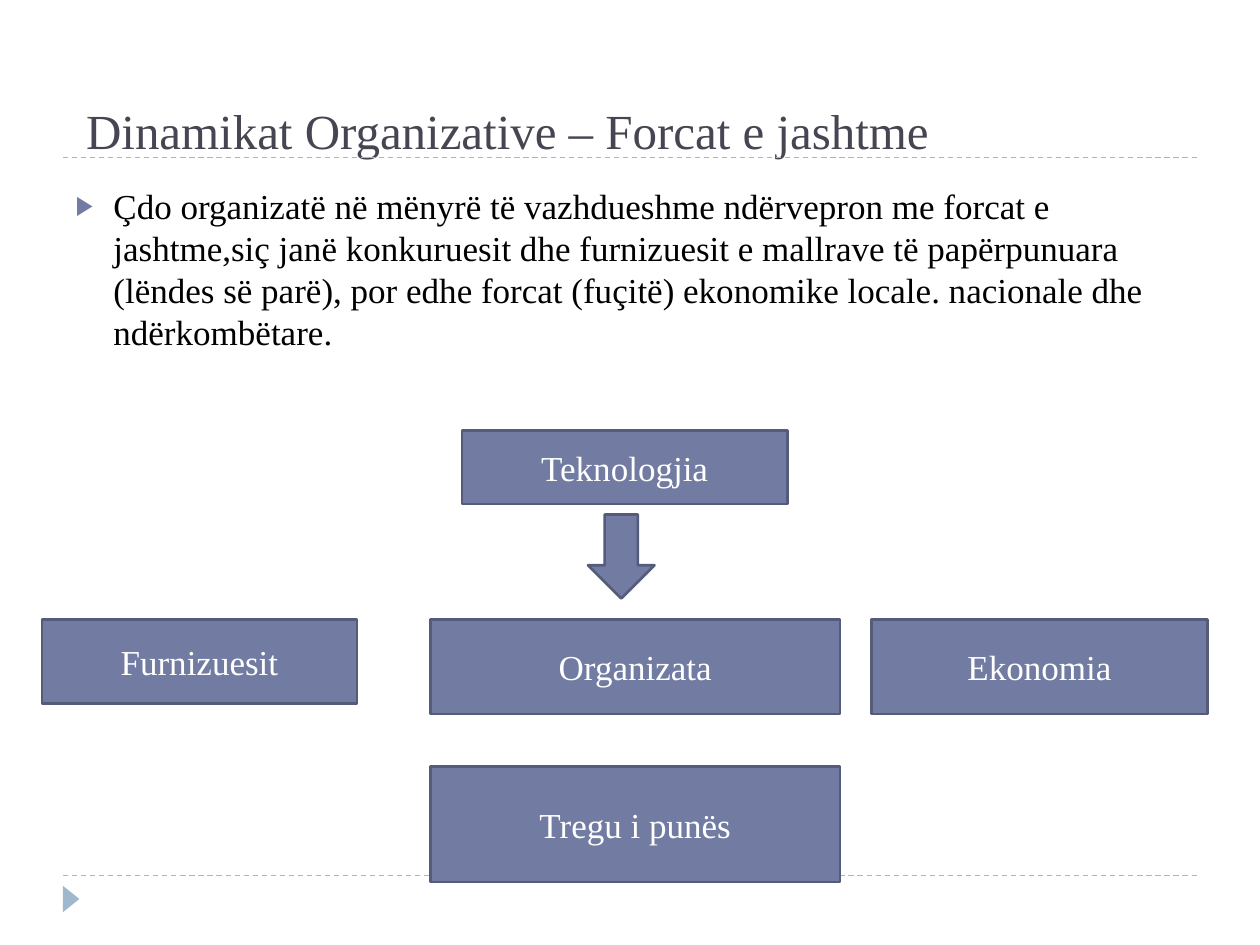
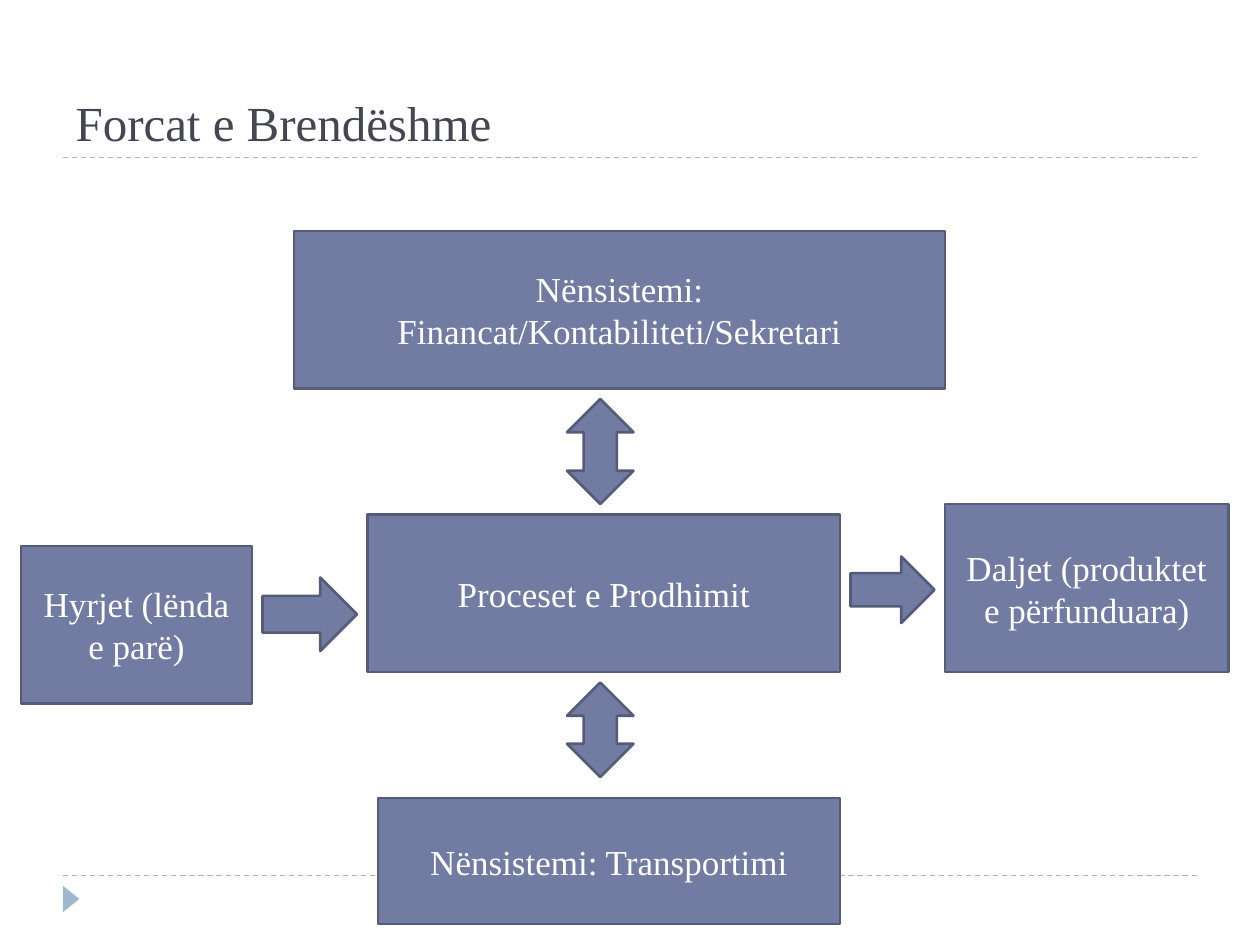
from lxml import etree
from pptx import Presentation
from pptx.dml.color import RGBColor
from pptx.enum.dml import MSO_LINE_DASH_STYLE as Dash
from pptx.enum.shapes import MSO_CONNECTOR as Connector, MSO_SHAPE as Preset
from pptx.enum.text import MSO_ANCHOR as Anchor, MSO_AUTO_SIZE as AutoSize, PP_ALIGN as Align
from pptx.oxml.ns import qn
from pptx.util import Pt

PURPLE = RGBColor(0x72, 0x7C, 0xA3)
PURPLE_DARK = RGBColor(0x54, 0x5C, 0x79)
BLUE_PALE = RGBColor(0x9F, 0xB8, 0xCD)
SLATE = RGBColor(0x46, 0x46, 0x53)
BLACK = RGBColor(0, 0, 0)
WHITE = RGBColor(0xFF, 0xFF, 0xFF)

FONT = "Times New Roman"
TITLE_FORMAT = {"name": FONT, "size": Pt(28), "bold": False}
TEXT_FORMAT = {"name": FONT, "size": Pt(20), "bold": False}
TITLE_ONLY, TITLE_AND_BODY = 5, 1
SLIDE_WIDTH, SLIDE_HEIGHT = 720, 540
MARGIN = 36
RULE_TOPS = (500.4, 90)
ARROW = 38


def set_attributes(target, values):
    for name, value in values.items():
        setattr(target, name, value)


def format_text(frame, font_format, color, align, anchor):
    set_attributes(frame, {"word_wrap": True, "auto_size": AutoSize.NONE, "vertical_anchor": anchor})
    for paragraph in frame.paragraphs:
        paragraph.alignment = align
        for run in paragraph.runs:
            set_attributes(run.font, font_format)
            run.font.color.rgb = color


def place(shape, box):
    set_attributes(shape, dict(zip(("left", "top", "width", "height"), map(Pt, box))))


def add_bullet(paragraph):
    properties = paragraph._p.get_or_add_pPr()
    properties.set("marL", str(Pt(21.6)))
    properties.set("indent", str(-Pt(21.6)))
    bullet_color = etree.SubElement(properties, qn("a:buClr"))
    etree.SubElement(bullet_color, qn("a:srgbClr"), val=str(PURPLE))
    etree.SubElement(properties, qn("a:buSzPct"), val="76000")
    etree.SubElement(properties, qn("a:buChar"), char="▶")


def add_preset(slide, preset, box, fill):
    shape = slide.shapes.add_shape(preset, *map(Pt, box))
    shape.shadow.inherit = False
    shape.fill.solid()
    shape.fill.fore_color.rgb = fill
    return shape


def add_frame(slide):
    """Draw the dashed rules and the footer marker shared by all slides."""
    for top in RULE_TOPS:
        rule = slide.shapes.add_connector(
            Connector.STRAIGHT, Pt(MARGIN), Pt(top), Pt(SLIDE_WIDTH - MARGIN), Pt(top))
        rule.line.color.rgb = BLUE_PALE
        set_attributes(rule.line, {"width": Pt(0.75), "dash_style": Dash.DASH})
        etree.SubElement(rule._element.spPr, qn("a:effectLst"))
    marker = add_preset(slide, Preset.ISOSCELES_TRIANGLE, (33.1, 509, 15.1, 9.4), BLUE_PALE)
    marker.rotation = 90
    marker.line.fill.background()


def add_titled_slide(presentation, layout, title, box):
    slide = presentation.slides.add_slide(presentation.slide_layouts[layout])
    place(slide.shapes.title, box)
    slide.shapes.title.text = title
    format_text(slide.shapes.title.text_frame, TITLE_FORMAT, SLATE, Align.LEFT, Anchor.BOTTOM)
    add_frame(slide)
    return slide


def fill_body(slide, text, box):
    body = slide.placeholders[1]
    place(body, box)
    body.text_frame.text = text
    format_text(body.text_frame, TEXT_FORMAT, BLACK, Align.LEFT, Anchor.TOP)
    for paragraph in body.text_frame.paragraphs:
        paragraph.space_before = Pt(6)
        add_bullet(paragraph)


def add_diagram(slide, origin, parts):
    """Draw (preset, left, top, width, height, text) parts, measured from the origin."""
    for preset, left, top, width, height, text in parts:
        box = (origin[0] + left, origin[1] + top, width, height)
        shape = add_preset(slide, preset, box, PURPLE)
        shape.line.color.rgb = PURPLE_DARK
        shape.line.width = Pt(1.5)
        if text:
            shape.text_frame.text = text
            format_text(shape.text_frame, TEXT_FORMAT, WHITE, Align.CENTER, Anchor.MIDDLE)


def add_external_forces(slide, origin):
    middle_left, middle_width, row_top = 222, 234, 108
    add_diagram(slide, origin, (
        (Preset.RECTANGLE, 240, 0, 186, 42, "Teknologjia"),
        (Preset.DOWN_ARROW, 312, 48, ARROW, 48, ""),
        (Preset.RECTANGLE, middle_left, row_top, middle_width, 54, "Organizata"),
        (Preset.RECTANGLE, 0, row_top, 180, 48, "Furnizuesit"),
        (Preset.RECTANGLE, 474, row_top, 192, 54, "Ekonomia"),
        (Preset.RECTANGLE, middle_left, 192, middle_width, 66, "Tregu i punës"),
    ))


def add_internal_forces(slide, origin):
    box_height, gap, arrow_left = 90, 6, 312
    process_left, process_top, process_width = 198, 162, 270
    process_right = process_left + process_width
    process_bottom = process_top + box_height
    add_diagram(slide, origin, (
        (Preset.RECTANGLE, 156, 0, 372, box_height, "Nënsistemi:\nFinancat/Kontabiliteti/Sekretari"),
        (Preset.UP_DOWN_ARROW, arrow_left, box_height + gap, ARROW, 60, ""),
        (Preset.RECTANGLE, process_left, process_top, process_width, box_height, "Proceset e Prodhimit"),
        (Preset.RIGHT_ARROW, process_right + gap, 186, 48, ARROW, ""),
        (Preset.RECTANGLE, 528, 156, 162, 96, "Daljet (produktet e përfunduara)"),
        (Preset.RIGHT_ARROW, 138, 198, 54, 42, ""),
        (Preset.RECTANGLE, 0, 180, 132, box_height, "Hyrjet (lënda e parë)"),
        (Preset.UP_DOWN_ARROW, arrow_left, process_bottom + gap, ARROW, 54, ""),
        (Preset.RECTANGLE, 204, 324, 264, 72, "Nënsistemi: Transportimi"),
    ))


def main():
    presentation = Presentation()
    set_attributes(presentation, {"slide_width": Pt(SLIDE_WIDTH), "slide_height": Pt(SLIDE_HEIGHT)})

    external = add_titled_slide(presentation, TITLE_AND_BODY,
                                "Dinamikat Organizative – Forcat e jashtme", (42, 16.6, 648, 78))
    fill_body(external,
              "Çdo organizatë në mënyrë të vazhdueshme ndërvepron me forcat e jashtme,siç janë "
              "konkuruesit dhe furnizuesit e mallrave të papërpunuara (lëndes së parë), por edhe "
              "forcat (fuçitë) ekonomike locale. nacionale dhe ndërkombëtare.",
              (MARGIN, 102, 648, 120))
    add_external_forces(external, (24, 246))

    internal = add_titled_slide(presentation, TITLE_ONLY, "Forcat e Brendëshme", (MARGIN, 12, 648, 78))
    add_internal_forces(internal, (12, 132))

    presentation.save("out.pptx")


if __name__ == "__main__":
    main()
